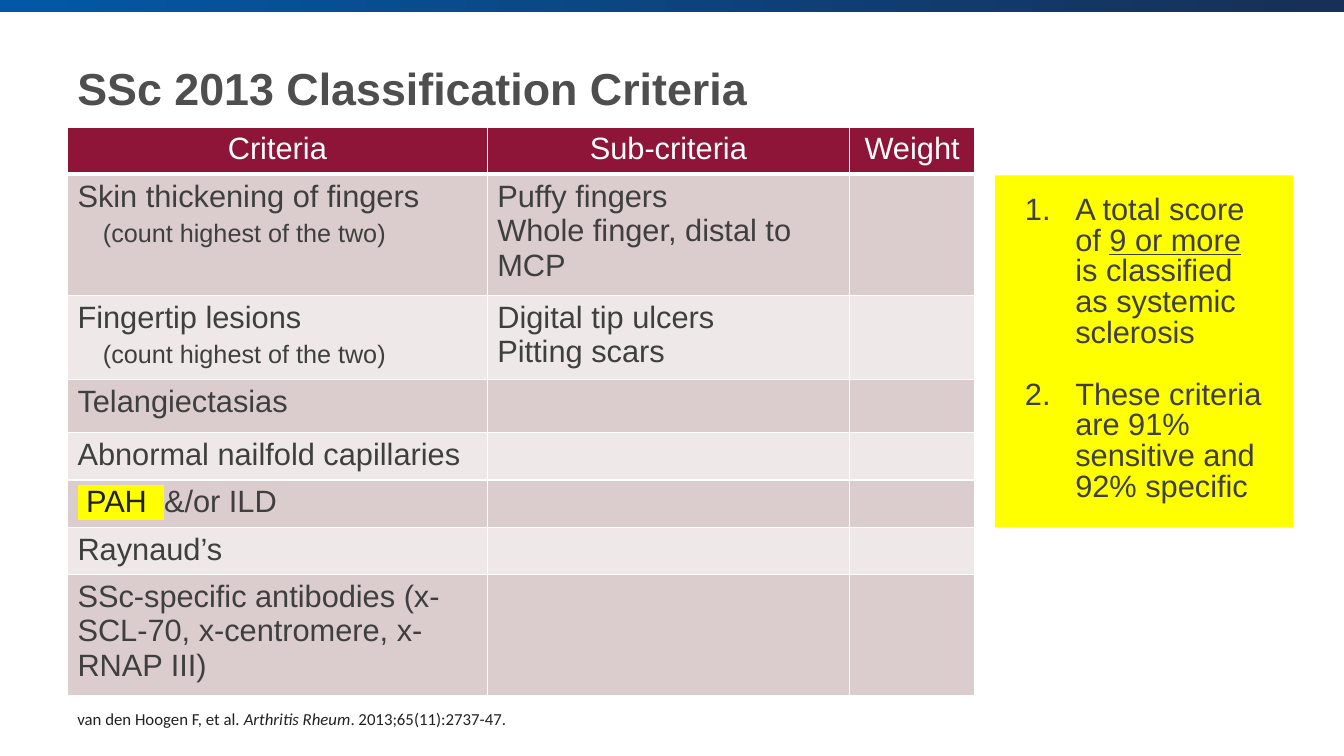
from lxml.etree import SubElement
from pptx import Presentation
from pptx.dml.color import RGBColor
from pptx.enum.shapes import MSO_SHAPE
from pptx.enum.text import MSO_ANCHOR, PP_ALIGN
from pptx.oxml.ns import qn
from pptx.util import Cm, Pt

WHITE = RGBColor(0xFF, 0xFF, 0xFF)
YELLOW = RGBColor(0xFF, 0xFF, 0x00)
BAR_START = RGBColor(0x02, 0x58, 0xA6)
BAR_END = RGBColor(0x17, 0x30, 0x57)
TITLE_GREY = RGBColor(0x4D, 0x4E, 0x4D)
BODY_GREY = RGBColor(0x3F, 0x3F, 0x3F)
NEAR_BLACK = RGBColor(0x20, 0x20, 0x20)
SOURCE_GREY = RGBColor(0x21, 0x21, 0x21)
CRIMSON = RGBColor(0x8E, 0x15, 0x37)
BANDS = (RGBColor(0xDB, 0xCC, 0xCE), RGBColor(0xEE, 0xE8, 0xE8))

COUNT_NOTE = "(count highest of the two)"
HEADINGS = ("Criteria", "Sub-criteria", "Weight")
CRITERIA = (
    ("Skin thickening of fingers", ("Puffy fingers", "Whole finger, distal to MCP")),
    ("Fingertip lesions", ("Digital tip ulcers", "Pitting scars")),
    ("Telangiectasias", ()),
    ("Abnormal nailfold capillaries", ()),
    ("PAH", ()),
    ("Raynaud’s", ()),
    ("SSc-specific antibodies (x-SCL-70, x-centromere, x-RNAP III)", ()),
)
COLUMN_WIDTHS = (10.58, 9.13, 3.15)
ROW_HEIGHTS = (1.19, 2.11, 2.11, 1.35, 1.19, 1.19, 1.19, 2.11)


def add_run(paragraph, text, size=22, color=BODY_GREY, font="Arial", bold=False,
            italic=None, underline=None, highlight=None):
    run = paragraph.add_run()
    run.text = text
    run.font.size = Pt(size)
    run.font.bold = bold
    run.font.italic = italic
    run.font.underline = underline
    run.font.color.rgb = color
    if highlight is not None:
        mark = SubElement(run.font._element, qn("a:highlight"))
        SubElement(mark, qn("a:srgbClr"), val=str(highlight))
    run.font.name = font


def next_paragraph(frame):
    """Return the first paragraph while it is empty, then new ones."""
    return frame.add_paragraph() if frame.paragraphs[0].runs else frame.paragraphs[0]


def add_top_bar(slide, left, top, width, height):
    bar = slide.shapes.add_shape(MSO_SHAPE.RECTANGLE, left, top, width, height)
    bar.shadow.inherit = False
    bar.line.fill.background()
    bar.fill.gradient()
    bar.fill.gradient_angle = 0
    for stop, color, position in zip(bar.fill.gradient_stops, (BAR_START, BAR_END), (0, 0.99)):
        stop.color.rgb = color
        stop.position = position


def add_title(slide, left, top, width, height):
    frame = slide.shapes.add_textbox(left, top, width, height).text_frame
    frame.word_wrap = True
    frame.vertical_anchor = MSO_ANCHOR.MIDDLE
    add_run(frame.paragraphs[0], "SSc 2013 Classification Criteria", 32, TITLE_GREY, bold=True)


def style_cell(cell, fill, bottom=1):
    properties = cell._tc.get_or_add_tcPr()
    for side, points in (("L", 1), ("R", 1), ("T", 1), ("B", bottom)):
        border = SubElement(properties, qn(f"a:ln{side}"), w=str(Pt(points)))
        solid = SubElement(border, qn("a:solidFill"))
        SubElement(solid, qn("a:srgbClr"), val=str(WHITE))
    cell.fill.solid()
    cell.fill.fore_color.rgb = fill


def fill_criterion(frame, criterion, has_options):
    paragraph = frame.paragraphs[0]
    if criterion == "PAH":
        add_run(paragraph, " ", highlight=YELLOW)
        add_run(paragraph, criterion, color=NEAR_BLACK, highlight=YELLOW)
        add_run(paragraph, "  ", highlight=YELLOW)
        add_run(paragraph, "&/or ILD")
    else:
        add_run(paragraph, criterion)
    if has_options:
        note = frame.add_paragraph()
        note.space_before = Pt(4)
        note._p.get_or_add_pPr().set("marL", str(Cm(0.64)))
        add_run(note, COUNT_NOTE, 18)


def add_criteria_table(slide, left, top):
    table = slide.shapes.add_table(
        len(ROW_HEIGHTS), len(COLUMN_WIDTHS), left, top,
        Cm(sum(COLUMN_WIDTHS)), Cm(sum(ROW_HEIGHTS))).table
    for column, width in zip(table.columns, COLUMN_WIDTHS):
        column.width = Cm(width)
    for row, height in zip(table.rows, ROW_HEIGHTS):
        row.height = Cm(height)

    # Heading row
    for cell, heading in zip(table.rows[0].cells, HEADINGS):
        style_cell(cell, CRIMSON, bottom=3)
        paragraph = cell.text_frame.paragraphs[0]
        paragraph.alignment = PP_ALIGN.CENTER
        add_run(paragraph, heading, color=WHITE)

    # Banded criteria rows
    for index, (criterion, options) in enumerate(CRITERIA):
        cells = list(table.rows[index + 1].cells)
        for cell in cells:
            style_cell(cell, BANDS[index % 2])
        fill_criterion(cells[0].text_frame, criterion, bool(options))
        for option in options:
            add_run(next_paragraph(cells[1].text_frame), option)


def add_score_box(slide, left, top, width, height):
    box = slide.shapes.add_shape(MSO_SHAPE.RECTANGLE, left, top, width, height)
    box.shadow.inherit = False
    box.fill.solid()
    box.fill.fore_color.rgb = YELLOW
    box.line.fill.background()
    frame = box.text_frame
    frame.word_wrap = True
    frame.vertical_anchor = MSO_ANCHOR.TOP
    frame.margin_left = frame.margin_right = Cm(0.76)
    frame.margin_top = frame.margin_bottom = Cm(0.51)

    points = (
        (("A total score of ", None), ("9 or more", True),
         (" is classified as systemic sclerosis", None)),
        (("These criteria are 91% sensitive and 92% specific", None),),
    )
    for point in points:
        paragraph = next_paragraph(frame)
        paragraph.alignment = PP_ALIGN.LEFT
        paragraph.line_spacing = Pt(22)
        for text, underline in point:
            add_run(paragraph, text, underline=underline)
        properties = paragraph._p.get_or_add_pPr()
        properties.set("marL", str(Cm(1.27)))
        properties.set("indent", str(-Cm(1.27)))
        SubElement(properties, qn("a:buFont"), typeface="+mj-lt")
        SubElement(properties, qn("a:buAutoNum"), type="arabicPeriod")
    frame.paragraphs[0].space_after = Pt(22)


def add_source(slide, left, top, width, height):
    frame = slide.shapes.add_textbox(left, top, width, height).text_frame
    frame.word_wrap = False
    paragraph = frame.paragraphs[0]
    for text, italic in (("van den Hoogen F, et al. ", None), ("Arthritis Rheum", True),
                         (". 2013;65(11):2737-47.", None)):
        add_run(paragraph, text, 12, SOURCE_GREY, "Calibri", italic=italic)


def main():
    presentation = Presentation()
    presentation.slide_width = Cm(33.87)
    presentation.slide_height = Cm(19.05)
    slide = presentation.slides.add_slide(presentation.slide_layouts[6])
    margin = Cm(1.7)
    add_top_bar(slide, 0, 0, presentation.slide_width, Cm(0.3))
    add_title(slide, margin, Cm(0.56), Cm(29.85), Cm(3.3))
    add_criteria_table(slide, margin, Cm(3.2))
    add_score_box(slide, Cm(25.07), Cm(4.42), Cm(7.52), Cm(8.86))
    add_source(slide, margin, Cm(17.73), Cm(11.56), Cm(0.76))
    presentation.save("out.pptx")


if __name__ == "__main__":
    main()
